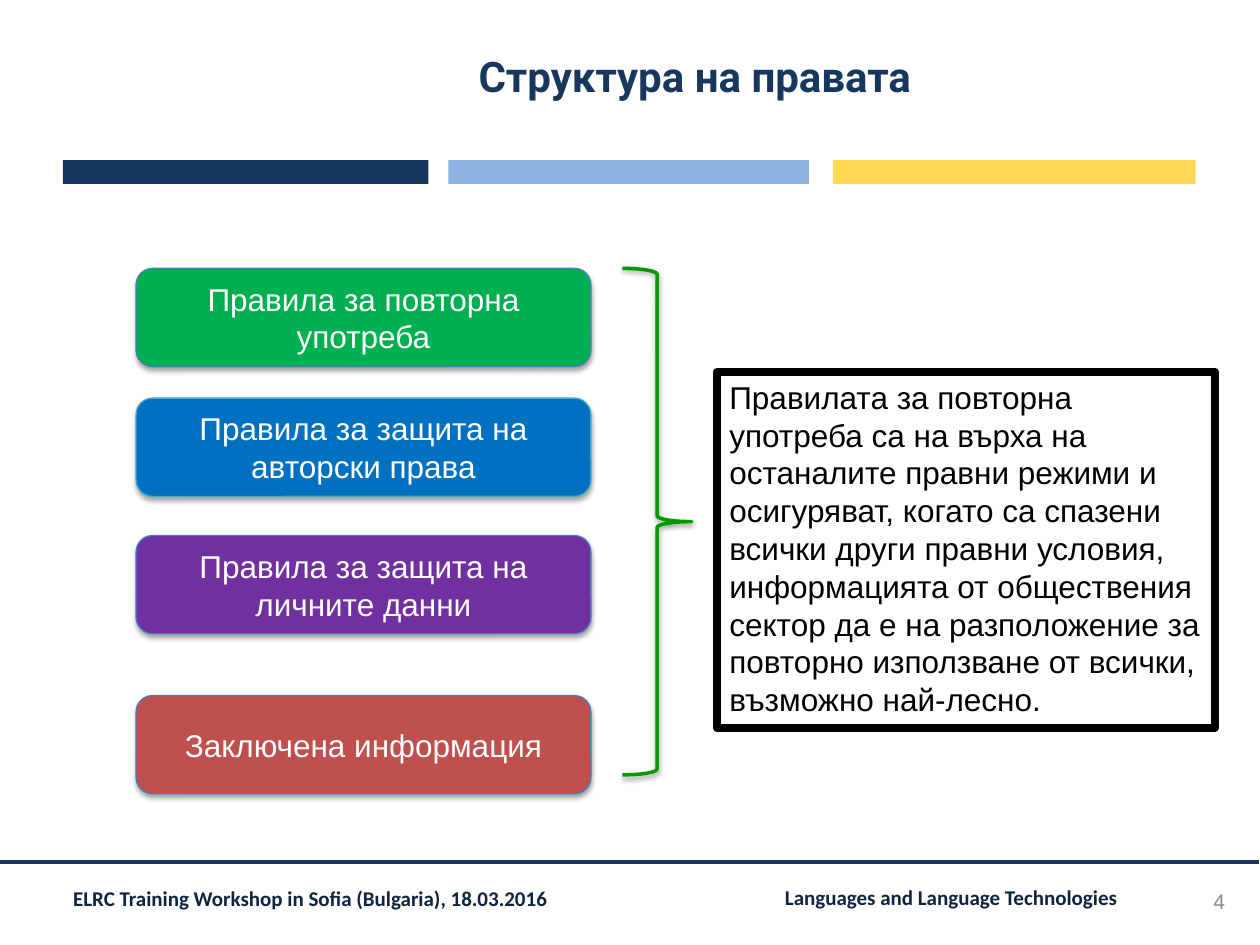
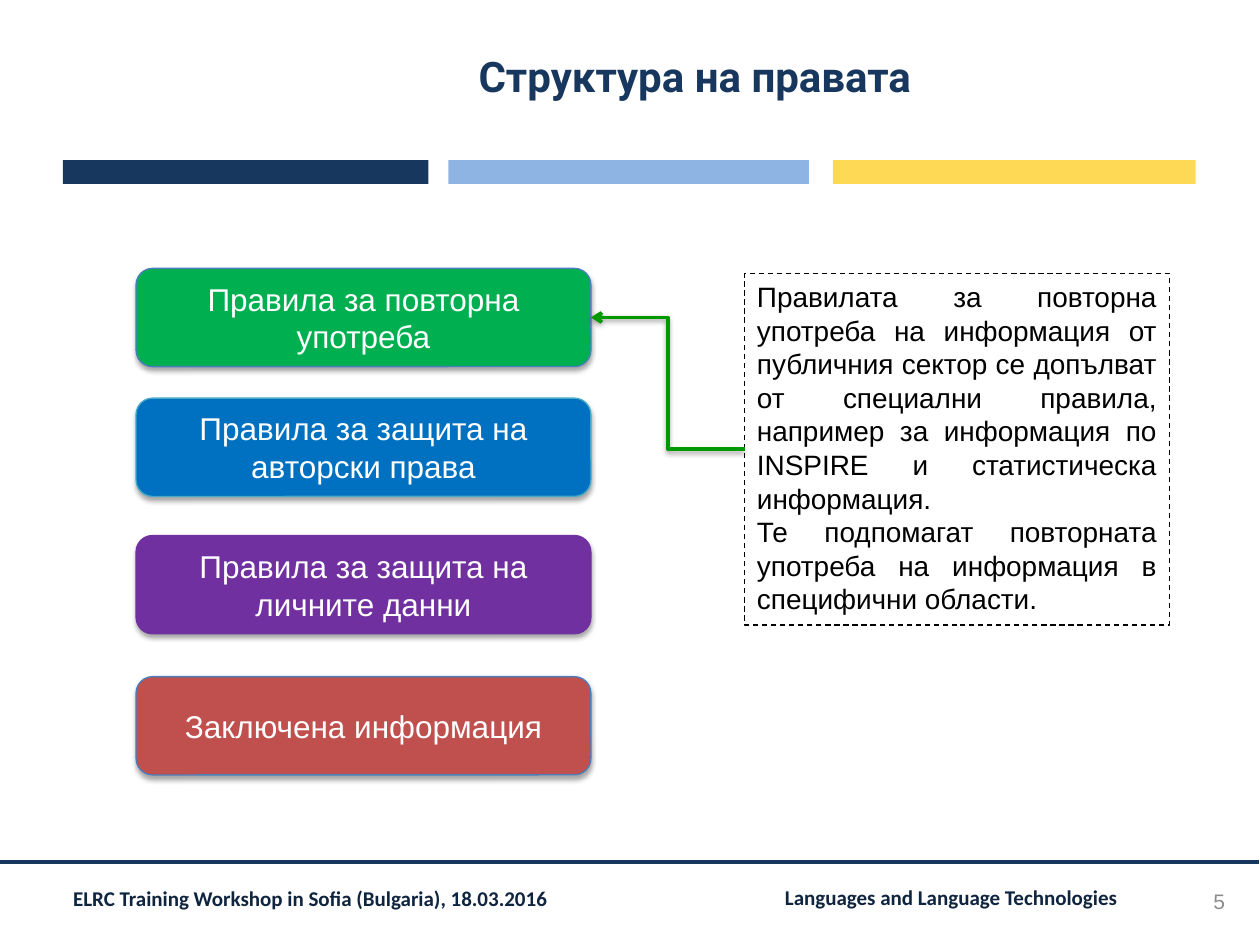
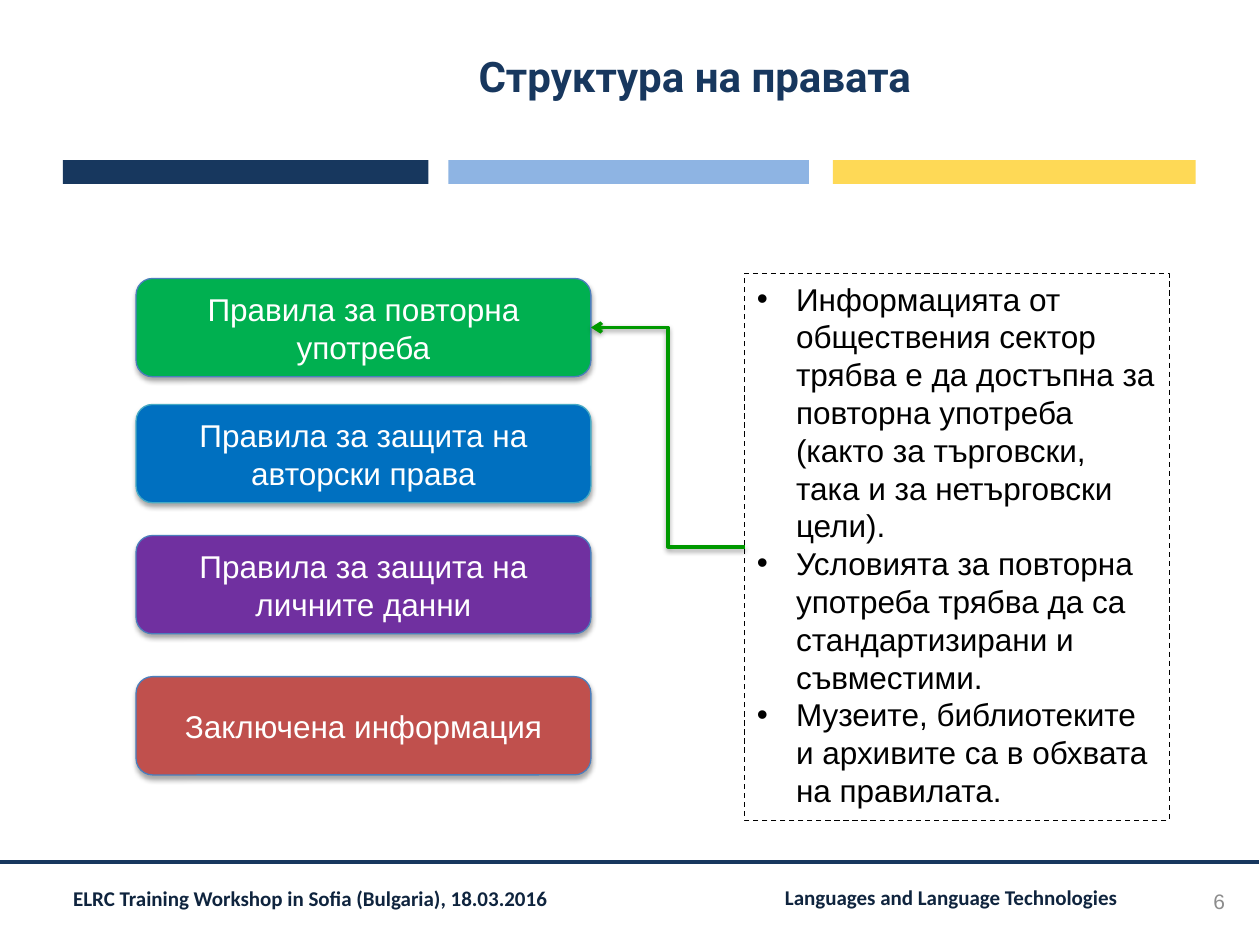
import pptx
import pptx.dml.color
import pptx.enum.dml
import pptx.enum.shapes
import pptx.enum.text
import pptx.oxml
import pptx.oxml.ns
import pptx.util
from lxml import etree

Inches = pptx.util.Inches
Pt = pptx.util.Pt
RGBColor = pptx.dml.color.RGBColor
Shape = pptx.enum.shapes.MSO_SHAPE
Connector = pptx.enum.shapes.MSO_CONNECTOR
Align = pptx.enum.text.PP_ALIGN
Anchor = pptx.enum.text.MSO_ANCHOR
Fit = pptx.enum.text.MSO_AUTO_SIZE
qn = pptx.oxml.ns.qn

NAVY = RGBColor(0x17, 0x37, 0x5E)
SKY = RGBColor(0x8E, 0xB4, 0xE3)
YELLOW = RGBColor(0xFE, 0xD9, 0x56)
INK = RGBColor(0x0F, 0x24, 0x3E)
GRAY = RGBColor(0x8C, 0x8C, 0x8C)
BLACK = RGBColor(0, 0, 0)
WHITE = RGBColor(0xFF, 0xFF, 0xFF)
GREEN = RGBColor(0x00, 0xB0, 0x50)
BLUE = RGBColor(0x00, 0x70, 0xC0)
PURPLE = RGBColor(0x70, 0x30, 0xA0)
RED = RGBColor(0xC0, 0x50, 0x4D)
EDGE_BLUE = RGBColor(0x4B, 0x7E, 0xBC)
EDGE_TEAL = RGBColor(0x46, 0xAA, 0xC5)
LINK_GREEN = RGBColor(0x00, 0x99, 0x00)

TITLE_FONT = {"name": "Roboto", "size": Pt(24), "bold": True}
FOOTER_FONT = {"name": "Calibri", "size": Pt(12), "bold": True}
NUMBER_FONT = {"name": "Arial", "size": Pt(12)}
BODY_FONT = {"name": "Arial", "size": Pt(18)}
SMALL_FONT = {"name": "Arial", "size": Pt(16)}

RULE_SHADOW = {"opacity": 35, "blur": 3.1, "distance": 1.8}
LINK_SHADOW = {"opacity": 38, "blur": 3.1, "distance": 1.6}

BANDS = [(0.5, 2.9, NAVY), (3.56, 2.86, SKY), (6.61, 2.88, YELLOW)]
FOOTERS = [
    ((0.5, 7.01, 4.72, 0.27), "ELRC Training Workshop in Sofia (Bulgaria), 18.03.2016"),
    ((6.15, 7, 2.95, 0.26), "Languages and Language Technologies"),
]
RULES = [
    ("Правила за повторна употреба", GREEN, EDGE_BLUE),
    ("Правила за защита на авторски права", BLUE, EDGE_TEAL),
    ("Правила за защита на личните данни", PURPLE, EDGE_BLUE),
    ("Заключена информация", RED, EDGE_BLUE),
]
SUMMARY = [
    "Правилата за повторна употреба са на върха на останалите правни режими и "
    "осигуряват, когато са спазени всички други правни условия, информацията от "
    "обществения сектор да е на разположение за повторно използване от всички, "
    "възможно най-лесно.",
]
SPECIAL_RULES = [
    "Правилата за повторна употреба на информация от публичния сектор се допълват "
    "от специални правила, например за информация по INSPIRE и статистическа "
    "информация.",
    "Те подпомагат повторната употреба на информация в специфични области.",
]
CONDITIONS = [
    "Информацията от обществения сектор трябва е да достъпна за повторна употреба "
    "(както за търговски, така и за нетърговски цели).",
    "Условията за повторна употреба трябва да са стандартизирани и съвместими.",
    "Музеите, библиотеките и архивите са в обхвата на правилата.",
]


class Builder:
    def __init__(self):
        self.deck = pptx.Presentation()
        self.deck.slide_width = Inches(10)
        self.deck.slide_height = Inches(7.5)
        self.page = None

    def new_page(self, title, number):
        self.page = self.deck.slides.add_slide(self.deck.slide_layouts[6])
        for left, width, color in BANDS:
            self.shape(Shape.RECTANGLE, (left, 1.27, width, 0.19), color)
        for place, words in FOOTERS:
            self.label(place, words, FOOTER_FONT, INK, margins=(0.08, 0.04),
                       layout={"line_spacing": 0.9})
        self.connector(Connector.STRAIGHT, (9.99, 6.84), (0, 6.84), NAVY, 2.25)
        self.label((2.36, 0.14, 6.31, 0.92), title, TITLE_FONT, NAVY, margins=(0, 0),
                   layout={"alignment": Align.CENTER}, anchor=Anchor.MIDDLE)
        self.label((7.49, 6.95, 2.33, 0.4), str(number), NUMBER_FONT, GRAY,
                   layout={"alignment": Align.RIGHT}, anchor=Anchor.MIDDLE)

    def fill_text(self, box, texts, font, color, layout, bullet=False, **frame_format):
        frame = box.text_frame
        for name, value in {"word_wrap": True, **frame_format}.items():
            setattr(frame, name, value)
        for index, words in enumerate(texts):
            para = frame.add_paragraph() if index else frame.paragraphs[0]
            for name, value in layout.items():
                setattr(para, name, value)
            if bullet:
                self.bullet(para)
            span = para.add_run()
            span.text = words
            for name, value in font.items():
                setattr(span.font, name, value)
            span.font.color.rgb = color

    def bullet(self, para):
        properties = para._p.get_or_add_pPr()
        properties.set("marL", str(Inches(0.31)))
        properties.set("indent", str(-Inches(0.31)))
        etree.SubElement(properties, qn("a:buFont"), typeface="Arial")
        etree.SubElement(properties, qn("a:buChar"), char="•")

    def label(self, place, words, font, color, layout, margins=(0.1, 0.05),
              anchor=Anchor.TOP):
        box = self.page.shapes.add_textbox(*map(Inches, place))
        side, edge = map(Inches, margins)
        self.fill_text(box, [words], font, color, layout, vertical_anchor=anchor,
                       margin_left=side, margin_right=side,
                       margin_top=edge, margin_bottom=edge)

    def shape(self, kind, place, fill=None, edge=None, weight=0.75, shadow=None):
        box = self.page.shapes.add_shape(kind, *map(Inches, place))
        box.shadow.inherit = False
        if fill is None:
            box.fill.background()
        else:
            box.fill.solid()
            box.fill.fore_color.rgb = fill
        if edge is None:
            box.line.fill.background()
        else:
            box.line.color.rgb = edge
            box.line.width = Pt(weight)
        if shadow:
            self.cast(box._element.spPr.find(qn("a:effectLst")), **shadow)
        return box

    def cast(self, effects, opacity, blur, distance):
        outer = etree.SubElement(effects, qn("a:outerShdw"), blurRad=str(Pt(blur)),
                                 dist=str(Pt(distance)), dir="5400000", rotWithShape="0")
        color = etree.SubElement(outer, qn("a:srgbClr"), val="000000")
        etree.SubElement(color, qn("a:alpha"), val=str(opacity * 1000))

    def connector(self, kind, start, end, color, weight, shadow=None):
        link = self.page.shapes.add_connector(kind, *map(Inches, start + end))
        link.line.color.rgb = color
        link.line.width = Pt(weight)
        effects = etree.SubElement(link._element.spPr, qn("a:effectLst"))
        if shadow:
            self.cast(effects, **shadow)
        return link

    def rules(self, tops, edges=None):
        boxes = []
        for index, (top, (words, fill, edge)) in enumerate(zip(tops, RULES)):
            edge = (edges or {}).get(index, edge)
            box = self.shape(Shape.ROUNDED_RECTANGLE, (1.08, top, 3.61, 0.78), fill, edge,
                             shadow=RULE_SHADOW)
            self.fill_text(box, [words], BODY_FONT, WHITE, {"alignment": Align.CENTER},
                           vertical_anchor=Anchor.MIDDLE)
            boxes.append(box)
        return boxes

    def note(self, place, texts, font, align=Align.LEFT, weight=0.75, dashed=True,
             bullet=False):
        box = self.shape(Shape.RECTANGLE, place, edge=BLACK, weight=weight)
        if dashed:
            box.line.dash_style = pptx.enum.dml.MSO_LINE.DASH
        self.fill_text(box, texts, font, BLACK, {"alignment": align}, bullet,
                       vertical_anchor=Anchor.TOP, auto_size=Fit.SHAPE_TO_FIT_TEXT)
        return box

    def brace(self, place):
        self.shape(Shape.RIGHT_BRACE, place, edge=LINK_GREEN, weight=2, shadow=LINK_SHADOW)

    def arrow(self, note, rule):
        link = self.connector(Connector.ELBOW, (5.91, 3.57), (4.69, 2.52), LINK_GREEN, 2,
                              LINK_SHADOW)
        link.begin_connect(note, 1)
        link.end_connect(rule, 3)
        etree.SubElement(link.line._get_or_add_ln(), qn("a:tailEnd"), type="arrow")


def main():
    builder = Builder()
    title = "Структура на правата"

    builder.new_page(title, 4)
    builder.rules([2.13, 3.16, 4.25, 5.52])
    builder.note((5.69, 2.95, 3.95, 2.83), SUMMARY, BODY_FONT, weight=4.5, dashed=False)
    builder.brace((4.94, 2.13, 0.55, 4.02))

    builder.new_page(title, 5)
    boxes = builder.rules([2.13, 3.16, 4.25, 5.37], edges={2: PURPLE})
    note = builder.note((5.91, 2.17, 3.37, 2.79), SPECIAL_RULES, SMALL_FONT, Align.JUSTIFY)
    builder.arrow(note, boxes[0])

    builder.new_page(title, 6)
    boxes = builder.rules([2.21, 3.21, 4.25, 5.37])
    note = builder.note((5.91, 2.17, 3.37, 4.34), CONDITIONS, BODY_FONT, bullet=True)
    builder.arrow(note, boxes[0])

    builder.deck.save("out.pptx")


if __name__ == "__main__":
    main()
